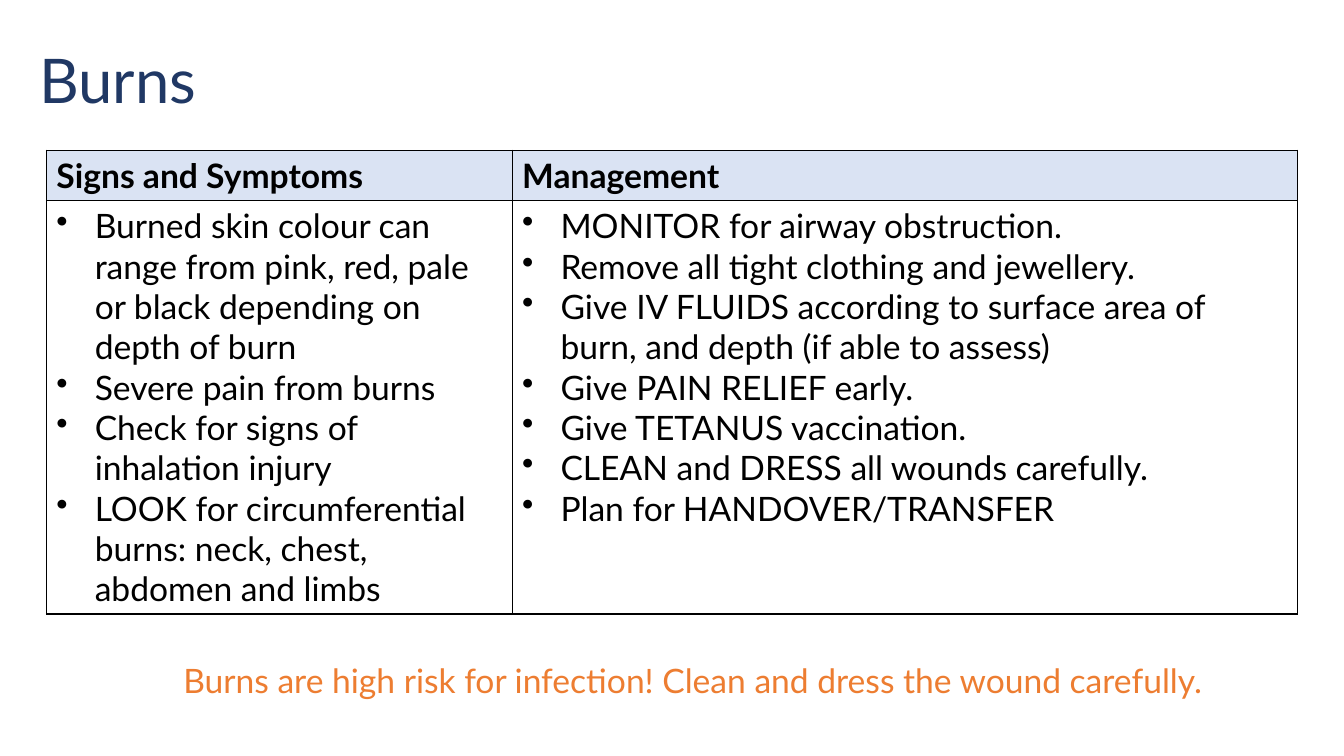
from lxml import etree
from pptx import Presentation, util as u
from pptx.dml.color import RGBColor
from pptx.enum import text
from pptx.oxml import ns

WIDTH, HEIGHT = u.Inches(13.33), u.Inches(7.5)
COLUMNS, ROWS = 133.3, 75  # grid of tenths of an inch

SIGNS = [
    "Burned skin colour can range from pink, red, pale or black depending on depth of burn",
    "Severe pain from burns",
    "Check for signs of inhalation injury",
    "LOOK for circumferential burns: neck, chest, abdomen and limbs",
]
MANAGEMENT = [
    "MONITOR for airway obstruction.",
    "Remove all tight clothing and jewellery.",
    "Give IV FLUIDS according to surface area of burn, and depth (if able to assess)",
    "Give PAIN RELIEF early.",
    "Give TETANUS vaccination.",
    "CLEAN and DRESS all wounds carefully.",
    "Plan for HANDOVER/TRANSFER",
]


class BurnsSlide:
    font = "Lato"
    colours = {"ink": "000000", "title": "203864", "header": "DAE3F3", "warning": "ED7D31"}

    def __init__(self, deck):
        self.slide = deck.slides.add_slide(deck.slide_layouts[6])

    def across(self, columns):
        return round(WIDTH * columns / COLUMNS)

    def down(self, rows):
        return round(HEIGHT * rows / ROWS)

    def place(self, left, top, width, height):
        return self.across(left), self.down(top), self.across(width), self.down(height)

    def style(self, paragraph, size, colour, bold=False):
        font = paragraph.font
        font.name, font.size, font.bold = self.font, u.Pt(size), bold
        font.color.rgb = RGBColor.from_string(self.colours[colour])

    def line(self, words, box, size, colour, wrap=True, spacing=1.0,
             anchor=text.MSO_ANCHOR.TOP):
        frame = self.slide.shapes.add_textbox(*self.place(*box)).text_frame
        frame.word_wrap, frame.vertical_anchor = wrap, anchor
        paragraph = frame.paragraphs[0]
        paragraph.text, paragraph.line_spacing = words, spacing
        self.style(paragraph, size, colour)

    def bullet(self, paragraph):
        properties = paragraph._p.get_or_add_pPr()
        indent = u.Inches(0.38)
        properties.set("marL", str(indent))
        properties.set("indent", str(-indent))
        colour = etree.SubElement(properties, ns.qn("a:buClr"))
        etree.SubElement(colour, ns.qn("a:srgbClr"), val=self.colours["ink"])
        etree.SubElement(properties, ns.qn("a:buChar"), char="•")

    def border(self, cell):
        properties = cell._tc.get_or_add_tcPr()
        for side in "LRTB":
            edge = etree.SubElement(properties, ns.qn(f"a:ln{side}"), w=str(u.Pt(1)))
            fill = etree.SubElement(edge, ns.qn("a:solidFill"))
            etree.SubElement(fill, ns.qn("a:srgbClr"), val=self.colours["ink"])

    def cell(self, cell, lines, header):
        self.border(cell)
        if header:
            cell.fill.solid()
            cell.fill.fore_color.rgb = RGBColor.from_string(self.colours["header"])
        else:
            cell.fill.background()
        cell.text = "\n".join(lines)
        for paragraph in cell.text_frame.paragraphs:
            if not header:
                self.bullet(paragraph)
            self.style(paragraph, 24, "ink", bold=header)

    def table(self, box, widths, heights, content):
        table = self.slide.shapes.add_table(
            len(heights), len(widths), *self.place(*box)).table
        table.first_row = table.horz_banding = False
        for column, width in zip(table.columns, widths):
            column.width = self.across(width)
        for row, height in zip(table.rows, heights):
            row.height = self.down(height)
        for r, row in enumerate(content):
            for c, lines in enumerate(row):
                self.cell(table.cell(r, c), lines, header=r == 0)


def main():
    deck = Presentation()
    deck.slide_width, deck.slide_height = WIDTH, HEIGHT
    burns = BurnsSlide(deck)

    # Signs and management
    burns.table((4.6, 14.9, 124.1, 46), (46.2, 77.9), (5, 41),
                [[["Signs and Symptoms"], ["Management"]], [SIGNS, MANAGEMENT]])

    # Infection warning
    burns.line("Burns are high risk for infection! Clean and dress the wound carefully.",
               (17.2, 65, 106.6, 5), 24, "warning", wrap=False)

    # Title
    burns.line("Burns", (2.9, 1, 115, 14.5), 44, "title", spacing=0.9,
               anchor=text.MSO_ANCHOR.MIDDLE)

    deck.save("out.pptx")


if __name__ == "__main__":
    main()
